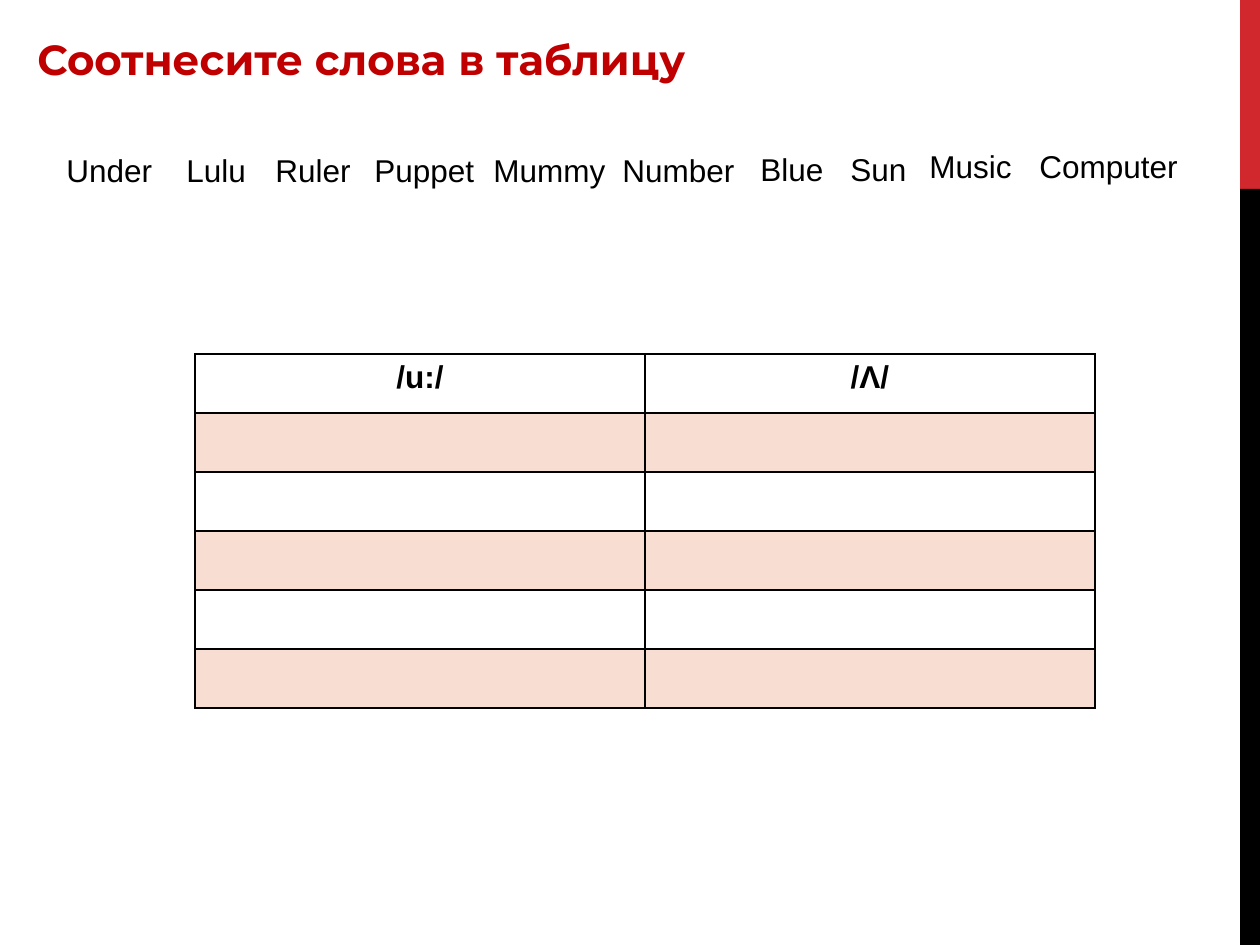
from lxml import etree
from pptx import Presentation, util as u
from pptx.dml.color import RGBColor
from pptx.enum import shapes, text
from pptx.oxml.ns import qn

EMU_PER_PX = 914400 / 126

# word, left, top, width
WORDS = [
    ("Under", 54, 145, 118),
    ("Lulu", 174, 145, 118),
    ("Ruler", 263, 145, 169),
    ("Puppet", 362, 145, 129),
    ("Mummy", 481, 145, 149),
    ("Number", 610, 145, 151),
    ("Blue", 748, 144, 100),
    ("Sun", 838, 144, 118),
    ("Music", 917, 141, 110),
    ("Computer", 1027, 141, 179),
]
SOUNDS = ["/u:/", "/Λ/"]
ROW_COUNT = 6


def px(*lengths):
    return [u.Emu(round(length * EMU_PER_PX)) for length in lengths]


def color(hex_string):
    return RGBColor.from_string(hex_string)


def format_runs(paragraph, size, font, hex_string, bold=False):
    for run in paragraph.runs:
        run.font.size = u.Pt(size)
        run.font.name = font
        run.font.bold = bold
        run.font.color.rgb = color(hex_string)


def add_bar(slide, box, hex_string):
    shape = slide.shapes.add_shape(shapes.MSO_SHAPE.RECTANGLE, *px(*box))
    shape.shadow.inherit = False
    shape.fill.solid()
    shape.fill.fore_color.rgb = color(hex_string)
    shape.line.fill.background()


def add_label(slide, words, box, size, font, hex_string, bold=False, wrap=True):
    frame = slide.shapes.add_textbox(*px(*box)).text_frame
    frame.word_wrap = wrap
    frame.auto_size = text.MSO_AUTO_SIZE.SHAPE_TO_FIT_TEXT
    frame.text = words
    format_runs(frame.paragraphs[0], size, font, hex_string, bold)


def set_borders(cell, hex_string):
    """Draw 1 pt lines on all sides; call before the cell's fill is set."""
    properties = cell._tc.get_or_add_tcPr()
    for side in ("a:lnL", "a:lnR", "a:lnT", "a:lnB"):
        line = etree.SubElement(properties, qn(side), w=str(u.Pt(1)))
        fill = etree.SubElement(line, qn("a:solidFill"))
        etree.SubElement(fill, qn("a:srgbClr"), val=hex_string)


def set_tint(cell, hex_string, percent):
    cell.fill.solid()
    cell.fill.fore_color.rgb = color(hex_string)
    rgb = cell._tc.tcPr.find(f"{qn('a:solidFill')}/{qn('a:srgbClr')}")
    etree.SubElement(rgb, qn("a:alpha"), val=str(percent * 1000))


def add_sound_table(slide, left, top, column_width, row_height):
    box = px(left, top, column_width * len(SOUNDS), row_height * ROW_COUNT)
    table = slide.shapes.add_table(ROW_COUNT, len(SOUNDS), *box).table
    table.first_row = False
    table.horz_banding = False
    for row_index, row in enumerate(table.rows):
        for cell in row.cells:
            set_borders(cell, "000000")
            if row_index % 2:
                set_tint(cell, "DC5924", 20)
            else:
                cell.fill.background()
    for cell, sound in zip(table.rows[0].cells, SOUNDS):
        cell.text = sound
        paragraph = cell.text_frame.paragraphs[0]
        paragraph.alignment = text.PP_ALIGN.CENTER
        format_runs(paragraph, 18, "Arial", "000000", bold=True)


def main():
    presentation = Presentation()
    presentation.slide_width, presentation.slide_height = px(1260, 945)
    slide = presentation.slides.add_slide(presentation.slide_layouts[6])

    add_bar(slide, (1240, 0, 20, 189), "D1282E")
    add_bar(slide, (1240, 189, 20, 756), "000000")
    add_label(slide, "Соотнесите слова в таблицу", (25, 27, 707, 63),
              24, "Montserrat", "C00000", bold=True, wrap=False)
    for word, left, top, width in WORDS:
        add_label(slide, word, (left, top, width, 51), 18, "Arial", "000000")
    add_sound_table(slide, left=195, top=354, column_width=450, row_height=59)

    presentation.save("out.pptx")


if __name__ == "__main__":
    main()
